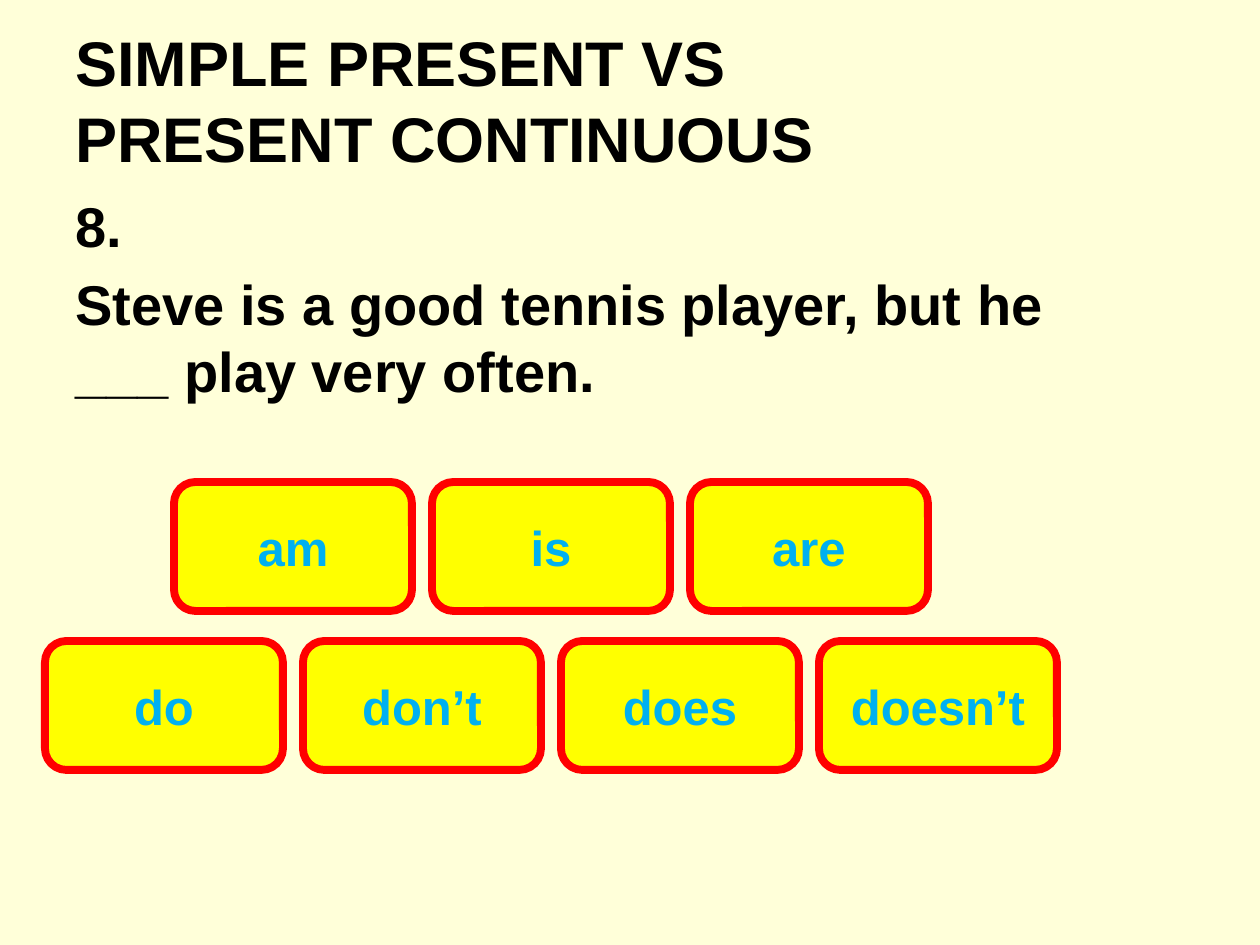
from pptx import Presentation
from pptx import util as u
from pptx.dml.color import RGBColor
from pptx.enum import shapes, text

PX = 914400 / 126  # EMU per px
COLORS = {"page": "FFFFD9", "ink": "000000", "button": "FFFF00",
          "border": "FF0000", "answer": "00B0F0"}


def place(*lengths):
    return [u.Emu(round(length * PX)) for length in lengths]


def style(para, size, color):
    para.font.name = "Arial"
    para.font.size = u.Pt(size)
    para.font.bold = True
    para.font.color.rgb = RGBColor.from_string(COLORS[color])


deck = Presentation()
deck.slide_width, deck.slide_height = place(1260, 945)
page = deck.slides.add_slide(deck.slide_layouts[6])
page.background.fill.solid()
page.background.fill.fore_color.rgb = RGBColor.from_string(COLORS["page"])

# Title
title = page.shapes.add_textbox(*place(63, 10, 977, 179)).text_frame
title.word_wrap = True
title.vertical_anchor = text.MSO_ANCHOR.MIDDLE
title.text = "SIMPLE PRESENT VS\vPRESENT CONTINUOUS"
style(title.paragraphs[0], 36, "ink")

# Question
question = page.shapes.add_textbox(*place(63, 185, 1013, 258)).text_frame
question.word_wrap = True
question.text = "8.\nSteve is a good tennis player, but he ___ play very often."
for para in question.paragraphs:
    style(para, 32, "ink")
question.paragraphs[1].space_before = u.Pt(6.4)

# Answer buttons, each row centred on the same axis
WIDTH, HEIGHT, GAP, CENTER = 238, 129, 20, 551
rows = [(482, ["am", "is", "are"]),
        (641, ["do", "don’t", "does", "doesn’t"])]
for top, answers in rows:
    left = CENTER - (len(answers) * (WIDTH + GAP) - GAP) / 2
    for column, answer in enumerate(answers):
        button = page.shapes.add_shape(
            shapes.MSO_SHAPE.ROUNDED_RECTANGLE,
            *place(left + column * (WIDTH + GAP), top, WIDTH, HEIGHT))
        button.shadow.inherit = False
        button.fill.solid()
        button.fill.fore_color.rgb = RGBColor.from_string(COLORS["button"])
        button.line.color.rgb = RGBColor.from_string(COLORS["border"])
        button.line.width = u.Pt(4.5)
        frame = button.text_frame
        frame.vertical_anchor = text.MSO_ANCHOR.MIDDLE
        frame.text = answer
        para = frame.paragraphs[0]
        para.alignment = text.PP_ALIGN.CENTER
        style(para, 28, "answer")

deck.save("out.pptx")
